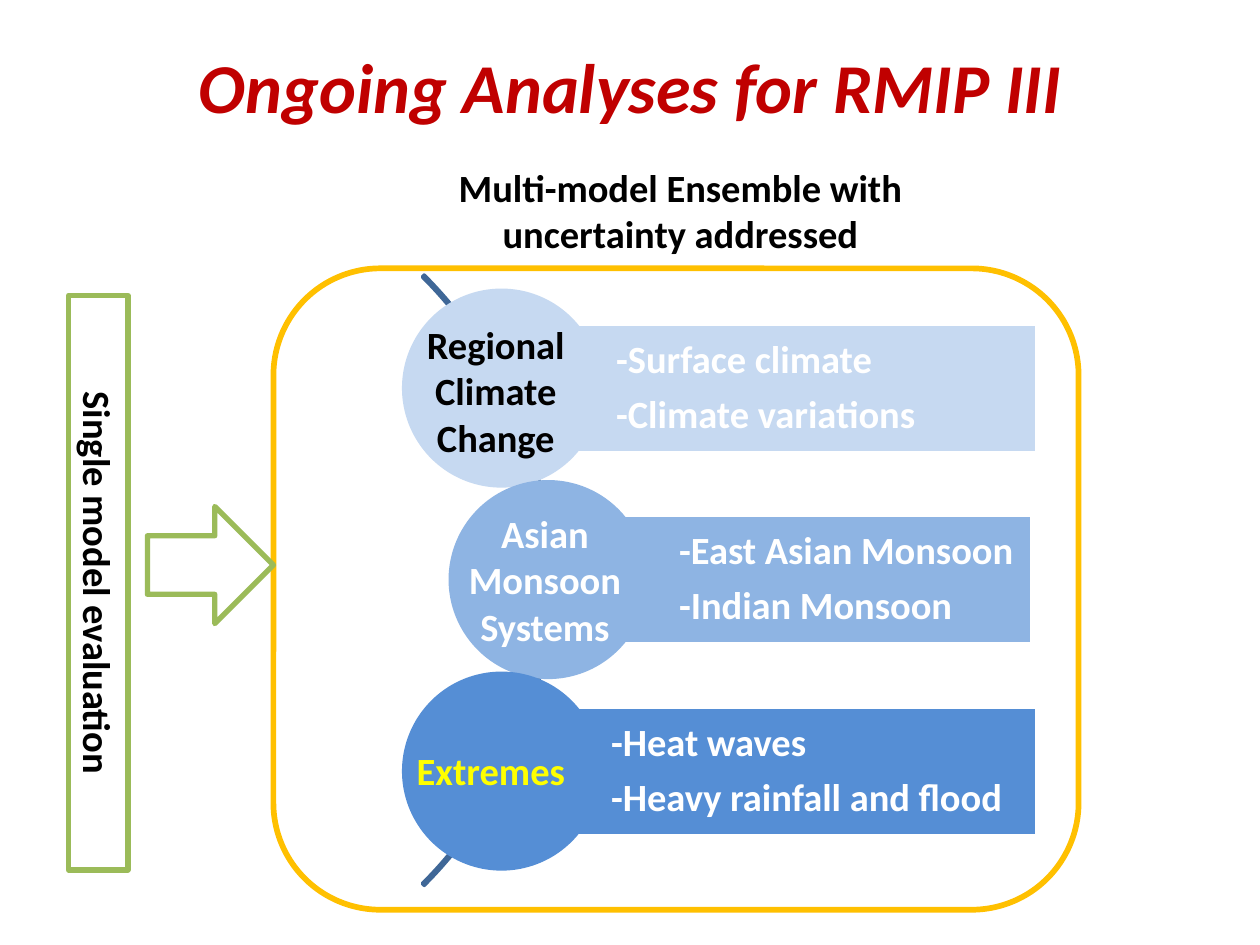
"""Build the slide on ongoing analyses for RMIP III."""
import pptx
import pptx.dml.color
import pptx.enum.shapes
import pptx.enum.text
import pptx.util

Inches = pptx.util.Inches
Pt = pptx.util.Pt
SHAPE = pptx.enum.shapes.MSO_SHAPE
ALIGN = pptx.enum.text.PP_ALIGN
ANCHOR = pptx.enum.text.MSO_ANCHOR

TITLE = "Ongoing Analyses for RMIP III"
HEADING = "Multi-model Ensemble with uncertainty addressed"
INPUT = "Single model evaluation"
TOPICS = [
    {
        "fill": "C6D9F1", "circle_left": 3.19, "bar_left": 4.08, "bar_right": 8.23,
        "points": ["-Surface climate", "-Climate variations"],
        "label": ["Regional Climate Change"], "label_color": "000000",
        "label_at": (3.21, 2.5, 1.45, 1.21),
    },
    {
        "fill": "8EB4E3", "circle_left": 3.56, "bar_left": 4.58, "bar_right": 8.19,
        "points": ["-East Asian Monsoon", "-Indian Monsoon"],
        "label": ["Asian", "Monsoon", "Systems"], "label_color": "FFFFFF",
        "label_at": (3.54, 4, 1.57, 1.21),
    },
    {
        "fill": "558ED5", "circle_left": 3.19, "bar_left": 4.04, "bar_right": 8.23,
        "points": ["-Heat waves", "-Heavy rainfall and flood"],
        "label": ["Extremes"], "label_color": "FFFF00",
        "label_at": (3.14, 5.88, 1.51, 0.49),
    },
]
FIRST_CENTER, ROW_PITCH = 3.08, 1.52
BAR_HEIGHT, CIRCLE_SIZE = 1.02, 1.58


def rgb(color):
    return pptx.dml.color.RGBColor.from_string(color)


def add_shape(slide, kind, box, fill=None, line=None, width=2):
    shape = slide.shapes.add_shape(kind, *map(Inches, box))
    shape.shadow.inherit = False
    if fill:
        shape.fill.solid()
        shape.fill.fore_color.rgb = rgb(fill)
    else:
        shape.fill.background()
    if line:
        shape.line.color.rgb = rgb(line)
        shape.line.width = Pt(width)
    else:
        shape.line.fill.background()
    return shape


def write(shape, lines, color, size=22, align=ALIGN.CENTER, anchor=ANCHOR.TOP):
    frame = shape.text_frame
    frame.word_wrap = True
    frame.vertical_anchor = anchor
    frame.text = "\n".join(lines)
    for paragraph in frame.paragraphs:
        paragraph.alignment = align
        paragraph.font.name = "Calibri"
        paragraph.font.size = Pt(size)
        paragraph.font.bold = True
        paragraph.font.color.rgb = rgb(color)
    return frame


def add_text(slide, box, lines, color, **style):
    return write(slide.shapes.add_textbox(*map(Inches, box)), lines, color, **style)


def add_topic(slide, topic, center):
    left = topic["bar_left"]
    bar_box = (left, center - BAR_HEIGHT / 2, topic["bar_right"] - left, BAR_HEIGHT)
    bar = add_shape(slide, SHAPE.RECTANGLE, bar_box, topic["fill"], "FFFFFF")
    frame = write(bar, topic["points"], "FFFFFF", align=ALIGN.LEFT, anchor=ANCHOR.MIDDLE)
    frame.margin_left = Inches(0.81)
    frame.margin_right = frame.margin_top = frame.margin_bottom = Inches(0.06)
    for paragraph in frame.paragraphs:
        paragraph.line_spacing = 0.9
        paragraph.space_after = Pt(7.7)
    circle_box = (topic["circle_left"], center - CIRCLE_SIZE / 2, CIRCLE_SIZE, CIRCLE_SIZE)
    add_shape(slide, SHAPE.OVAL, circle_box, topic["fill"])


def main():
    presentation = pptx.Presentation()
    presentation.slide_width, presentation.slide_height = Inches(10), Inches(7.5)
    slide = presentation.slides.add_slide(presentation.slide_layouts[6])

    arc = add_shape(slide, SHAPE.BLOCK_ARC, (-2.48, 1.18, 6.85, 6.85), line="3F6797")
    for index, value in enumerate((189, 27, 0.003)):
        arc.adjustments[index] = value

    for row, topic in enumerate(TOPICS):
        add_topic(slide, topic, FIRST_CENTER + row * ROW_PITCH)
    for topic in TOPICS:
        add_text(slide, topic["label_at"], topic["label"], topic["label_color"])

    add_shape(slide, SHAPE.ROUNDED_RECTANGLE, (2.17, 2.13, 6.39, 5.09), line="FFC000", width=3.25)
    add_text(slide, (3.12, 1.25, 4.56, 0.84), [HEADING], "000000")
    title = add_text(slide, (0.5, 0.05, 9, 1.25), [TITLE], "C00000", size=40, anchor=ANCHOR.MIDDLE)
    title.paragraphs[0].font.italic = True

    evaluation = add_shape(slide, SHAPE.RECTANGLE, (-1.5, 4.39, 4.56, 0.47), line="9BBB59", width=3)
    evaluation.rotation = 90
    write(evaluation, [INPUT], "000000")
    add_shape(slide, SHAPE.RIGHT_ARROW, (1.17, 4.02, 1, 0.93), line="9BBB59", width=3)

    presentation.save("out.pptx")


if __name__ == "__main__":
    main()
